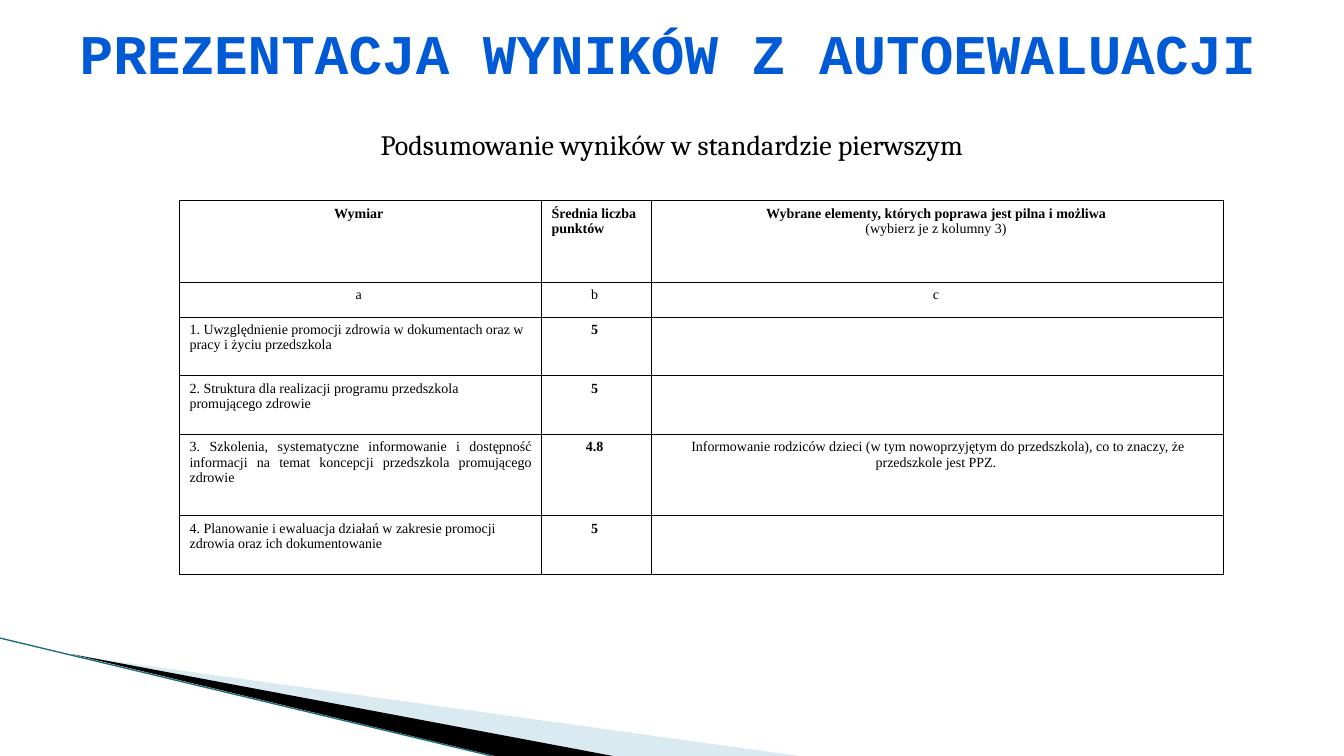
from lxml import etree
from pptx import Presentation
from pptx import util as u
from pptx.dml.color import RGBColor
from pptx.enum import shapes, text
from pptx.oxml.ns import qn

presentation = Presentation()
presentation.slide_width = u.Inches(13.33)
presentation.slide_height = u.Inches(7.5)
slide = presentation.slides.add_slide(presentation.slide_layouts[6])
COLUMN = presentation.slide_width / 100
ROW = presentation.slide_height / 100
LEFT, CENTER, JUSTIFY = text.PP_ALIGN.LEFT, text.PP_ALIGN.CENTER, text.PP_ALIGN.JUSTIFY
NBSP = chr(160)


def color(value):
    return RGBColor.from_string(value)


def write(paragraph, words, font_name, size, fill, bold=False, align=CENTER):
    paragraph.text = words
    paragraph.alignment = align
    font = paragraph.runs[0].font
    font.name, font.size, font.bold = font_name, u.Pt(size), bold
    font.color.rgb = color(fill)


wedges = [
    ([(5.48, 86.73), (59.49, 100), (45.61, 100)], "A0CBDC", 40),
    ([(5.33, 86.53), (45.6, 100), (36.8, 100)], "000000", 100),
]
for corners, fill, opacity in wedges:
    points = [(int(x * COLUMN), int(y * ROW)) for x, y in corners]
    builder = slide.shapes.build_freeform(*points[0])
    builder.add_line_segments(points[1:])
    wedge = builder.convert_to_shape()
    wedge.shadow.inherit = False
    wedge.line.fill.background()
    wedge.fill.solid()
    wedge.fill.fore_color.rgb = color(fill)
    if opacity < 100:
        tint = wedge.fill._xPr.find(qn("a:solidFill"))[0]
        etree.SubElement(tint, qn("a:alpha")).set("val", str(opacity * 1000))

edge = slide.shapes.add_connector(
    shapes.MSO_CONNECTOR.STRAIGHT,
    0, int(84.4 * ROW), int(36.6 * COLUMN), int(100 * ROW))
edge.line.color.rgb = color("1A6B7C")
edge.line.width = u.Pt(0.95)
etree.SubElement(edge._element.spPr, qn("a:effectLst"))

column_widths = [26.93, 8.18, 42.6]
row_heights = [10.8, 4.6, 7.75, 7.75, 10.8, 7.75]
rows = [
    [("Wymiar", True, CENTER), ("Średnia liczba punktów", True, LEFT),
     ("Wybrane elementy, których poprawa jest pilna i możliwa\n(wybierz je z kolumny 3)",
      True, CENTER)],
    [("a", False, CENTER), ("b", False, CENTER), ("c", False, CENTER)],
    [("1. Uwzględnienie promocji zdrowia w dokumentach oraz w pracy i życiu przedszkola",
      False, LEFT), ("5", True, CENTER), None],
    [("2. Struktura dla realizacji programu przedszkola\npromującego zdrowie",
      False, LEFT), ("5", True, CENTER), None],
    [("3. Szkolenia, systematyczne informowanie i dostępność informacji na temat "
      "koncepcji przedszkola promującego zdrowie", False, JUSTIFY),
     ("4.8", True, CENTER),
     ("Informowanie rodziców dzieci (w tym nowoprzyjętym do przedszkola), co to znaczy, "
      "że przedszkole jest PPZ.", False, CENTER)],
    [("4. Planowanie i ewaluacja działań w zakresie promocji zdrowia oraz ich dokumentowanie",
      False, LEFT), ("5", True, CENTER), None],
]
table = slide.shapes.add_table(
    len(rows), len(column_widths), int(13.36 * COLUMN), int(26.53 * ROW),
    int(sum(column_widths) * COLUMN), int(sum(row_heights) * ROW)).table
table.first_row = table.horz_banding = False
for table_column, width in zip(table.columns, column_widths):
    table_column.width = int(width * COLUMN)
for table_row, height in zip(table.rows, row_heights):
    table_row.height = int(height * ROW)

for table_row, contents in zip(table.rows, rows):
    for cell, content in zip(table_row.cells, contents):
        properties = cell._tc.get_or_add_tcPr()
        for side in ("lnL", "lnR", "lnT", "lnB"):
            border = etree.SubElement(properties, qn("a:" + side), w=str(u.Pt(0.75)))
            paint = etree.SubElement(border, qn("a:solidFill"))
            etree.SubElement(paint, qn("a:srgbClr"), val="000000")
        cell.fill.background()
        if content is None:
            cell.text_frame.paragraphs[0].font.size = u.Pt(10)
            continue
        words, bold, align = content
        cell.text_frame.text = words
        for paragraph in cell.text_frame.paragraphs:
            emphasis = bold and not paragraph.text.startswith("(")
            write(paragraph, paragraph.text + NBSP, "Times New Roman", 10, "000000",
                  emphasis, align)

headings = [
    ("PREZENTACJA WYNIKÓW Z AUTOEWALUACJI", -0.68, 1.73, 100.68, 10.27,
     "Courier New", 40, "005AD6", True),
    ("Podsumowanie wyników w standardzie pierwszym", 0, 16.27, 100, 5.87,
     "Cambria", 20, "000000", False),
]
for words, left, top, width, height, font_name, size, fill, bold in headings:
    heading = slide.shapes.add_textbox(
        int(left * COLUMN), int(top * ROW), int(width * COLUMN), int(height * ROW))
    heading.text_frame.word_wrap = True
    write(heading.text_frame.paragraphs[0], words, font_name, size, fill, bold)

presentation.save("out.pptx")
